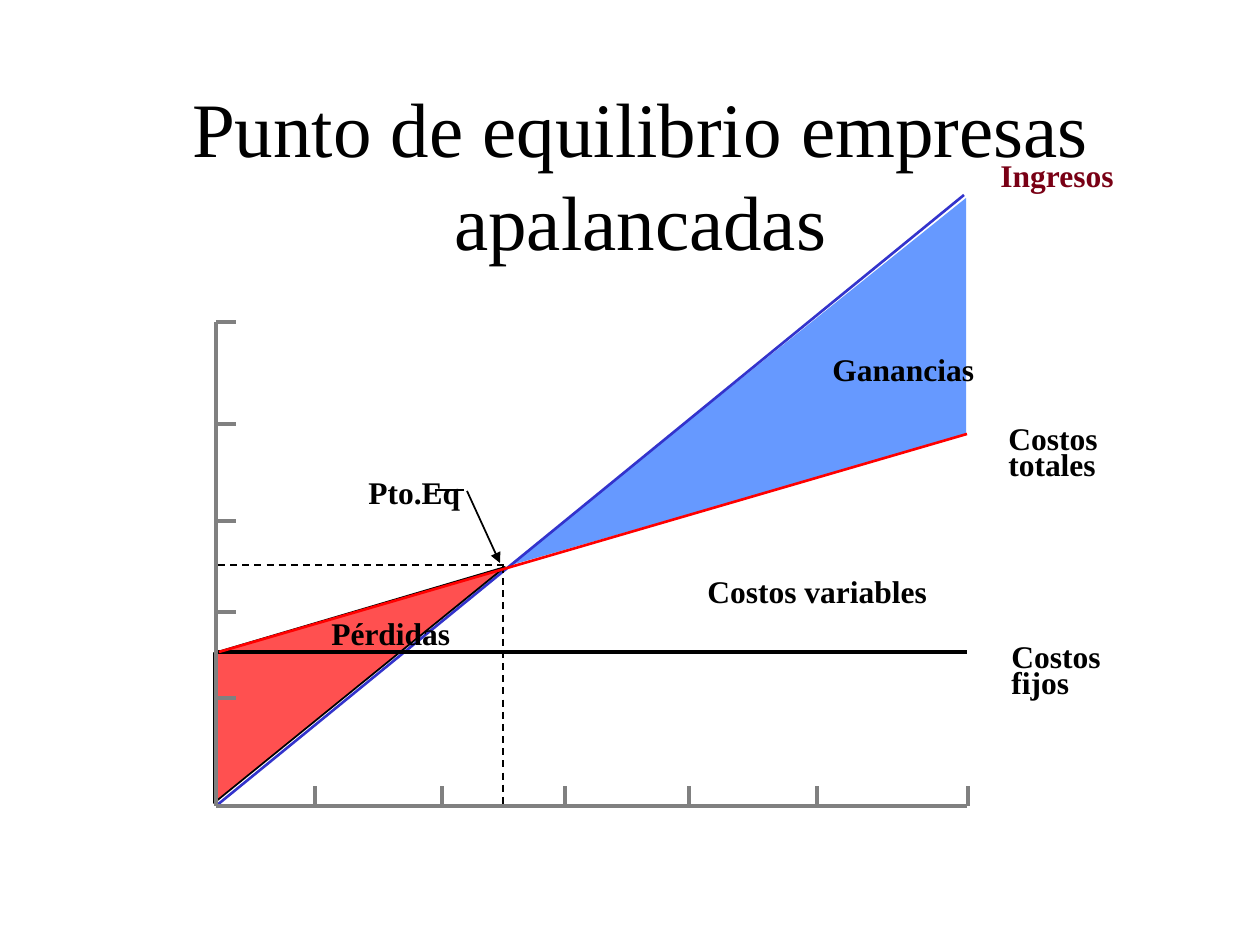
"""Build the break-even chart slide for leveraged companies."""
from dataclasses import dataclass
from typing import Optional

from lxml.etree import SubElement
from pptx import Presentation
from pptx.dml.color import RGBColor
from pptx.enum.dml import MSO_LINE
from pptx.enum.shapes import MSO_CONNECTOR
from pptx.enum.text import MSO_ANCHOR, MSO_AUTO_SIZE, PP_ALIGN
from pptx.oxml.ns import qn
from pptx.util import Emu, Inches, Pt

PX = Inches(1) / 126
FONT = "Times New Roman"
BLACK = RGBColor(0x00, 0x00, 0x00)
GREY = RGBColor(0x80, 0x80, 0x80)
RED = RGBColor(0xFF, 0x00, 0x00)
BLUE = RGBColor(0x33, 0x33, 0xCC)
MAROON = RGBColor(0x79, 0x00, 0x15)
PROFIT_BLUE = RGBColor(0x66, 0x99, 0xFF)
LOSS_RED = RGBColor(0xFF, 0x50, 0x50)


@dataclass
class Area:
    points: tuple
    fill: RGBColor
    outline: Optional[RGBColor] = None


@dataclass
class Stroke:
    start: tuple
    end: tuple
    color: RGBColor = BLACK
    width: float = 1
    dashed: bool = False
    arrow: bool = False


@dataclass
class Label:
    text: str
    box: tuple
    color: RGBColor = BLACK
    wrap: bool = True


ORIGIN_X, ORIGIN_Y, RIGHT, FIXED_Y = 216, 806, 967, 652
TICK = 20

PROFIT = Area(((508, 566), (966, 198), (966, 435)), PROFIT_BLUE)
INCOME = Stroke((ORIGIN_X, ORIGIN_Y), (964, 195), BLUE, 1.5)
LOSS = Area(((505, 567), (214, 653), (214, 803)), LOSS_RED, BLACK)
STROKES = (
    Stroke((ORIGIN_X, ORIGIN_Y), (RIGHT, ORIGIN_Y), GREY, 2),
    Stroke((ORIGIN_X, FIXED_Y), (RIGHT, FIXED_Y), BLACK, 2),
    Stroke((218, 565), (508, 565), dashed=True),
    Stroke((503, 566), (503, ORIGIN_Y), dashed=True),
    Stroke((219, FIXED_Y), (RIGHT, 434), RED, 1.5),
    Stroke((435, 490), (464, 490)),
    Stroke((467, 491), (500, 563), arrow=True),
    Stroke((ORIGIN_X, 322), (ORIGIN_X, ORIGIN_Y), GREY, 2),
)
X_TICKS = (315, 442, 565, 689, 817, 968)
Y_TICKS = (322, 424, 521, 612, 698)
LABELS = (
    Label("Ingresos", (988, 160, 181, 77), MAROON),
    Label("Costos totales", (996, 423, 136, 103)),
    Label("Costos variables", (695, 576, 245, 77), wrap=False),
    Label("Costos fijos", (999, 641, 122, 66)),
    Label("Ganancias", (820, 354, 167, 77), wrap=False),
    Label("Pto.Eq", (356, 477, 118, 39)),
    Label("Pérdidas", (319, 618, 153, 39)),
)


def emu(*lengths: int) -> list:
    """Turn px lengths into EMU."""
    return [Emu(round(length * PX)) for length in lengths]


def draw_area(shapes, area: Area) -> None:
    """Draw a filled polygon."""
    first, *rest = area.points
    builder = shapes.build_freeform(*first, scale=PX)
    builder.add_line_segments(rest, close=True)
    polygon = builder.convert_to_shape()
    polygon.shadow.inherit = False
    polygon.fill.solid()
    polygon.fill.fore_color.rgb = area.fill
    if area.outline is None:
        polygon.line.fill.background()
    else:
        polygon.line.color.rgb = area.outline
        polygon.line.width = Pt(1)


def draw_stroke(shapes, stroke: Stroke) -> None:
    """Draw a straight line, dashed or arrowed on request."""
    connector = shapes.add_connector(
        MSO_CONNECTOR.STRAIGHT, *emu(*stroke.start, *stroke.end)
    )
    connector.line.color.rgb = stroke.color
    connector.line.width = Pt(stroke.width)
    if stroke.dashed:
        connector.line.dash_style = MSO_LINE.DASH
    if stroke.arrow:
        SubElement(connector.line._get_or_add_ln(), qn("a:tailEnd"), type="triangle")
    SubElement(connector._element.spPr, qn("a:effectLst"))


def add_text(shapes, label: Label, frame_format: dict,
             paragraph_format: dict, font_format: dict) -> None:
    """Add a text box with the given formats."""
    frame = shapes.add_textbox(*emu(*label.box)).text_frame
    paragraph = frame.paragraphs[0]
    run = paragraph.add_run()
    run.text = label.text
    run.font.color.rgb = label.color
    for target, values in (
        (frame, {"word_wrap": label.wrap, **frame_format}),
        (paragraph, paragraph_format),
        (run.font, {"name": FONT, **font_format}),
    ):
        for key, value in values.items():
            setattr(target, key, value)


def main() -> None:
    """Build and save the slide."""
    deck = Presentation()
    deck.slide_width, deck.slide_height = Inches(10), Inches(7.5)
    shapes = deck.slides.add_slide(deck.slide_layouts[6]).shapes

    add_text(
        shapes,
        Label("Punto de equilibrio empresas apalancadas", (105, 94, 1071, 158)),
        {"vertical_anchor": MSO_ANCHOR.MIDDLE},
        {"alignment": PP_ALIGN.CENTER},
        {"size": Pt(44)},
    )
    draw_area(shapes, PROFIT)
    draw_stroke(shapes, INCOME)
    draw_area(shapes, LOSS)
    for stroke in STROKES:
        draw_stroke(shapes, stroke)
    for x in X_TICKS:
        draw_stroke(shapes, Stroke((x, ORIGIN_Y), (x, ORIGIN_Y - TICK), GREY, 2))
    for y in Y_TICKS:
        draw_stroke(shapes, Stroke((ORIGIN_X, y), (ORIGIN_X + TICK, y), GREY, 2))
    for label in LABELS:
        add_text(
            shapes,
            label,
            {"auto_size": MSO_AUTO_SIZE.SHAPE_TO_FIT_TEXT},
            {"line_spacing": 0.7, "space_before": Pt(3.6)},
            {"size": Pt(18), "bold": True},
        )
    deck.save("out.pptx")


if __name__ == "__main__":
    main()
